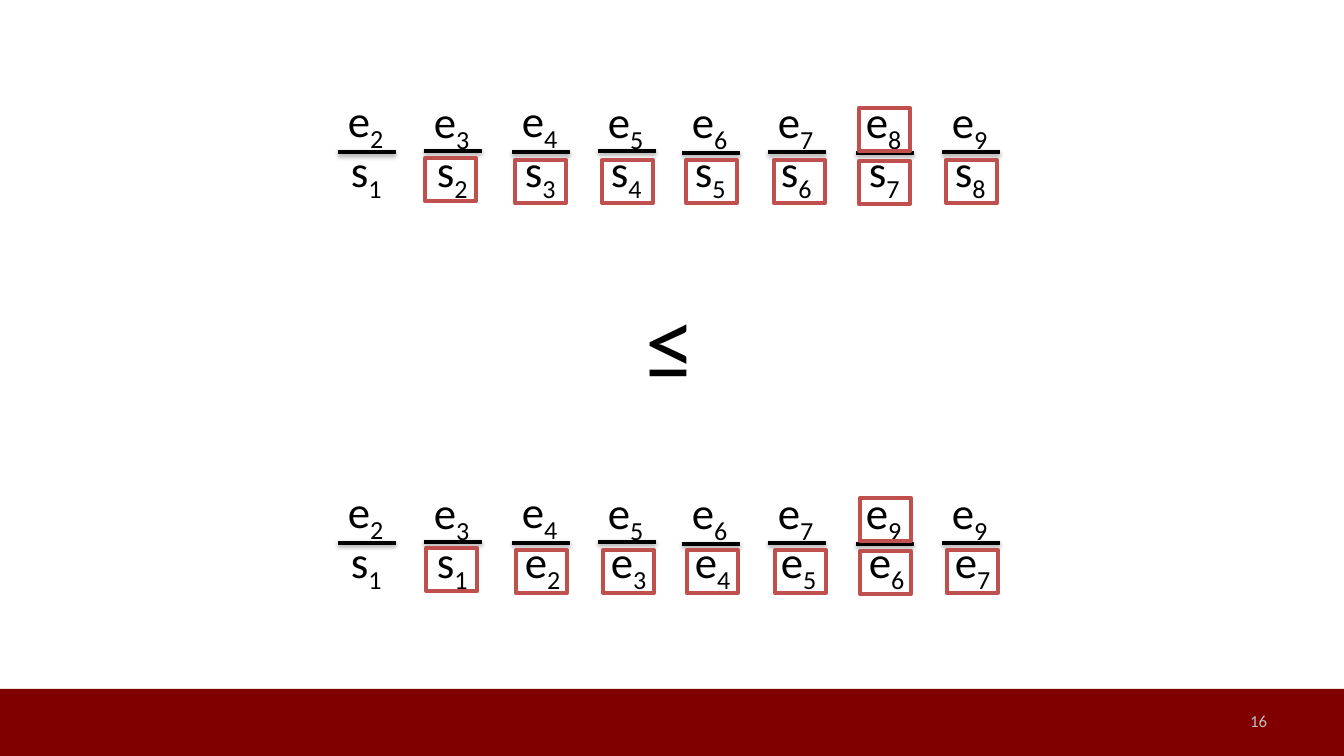
from lxml import etree
from pptx import Presentation
from pptx.dml.color import RGBColor
from pptx.enum import shapes, text
from pptx.oxml import ns
from pptx.util import Pt

PX = 914400 / 100.8
BLACK = RGBColor(0x00, 0x00, 0x00)
MAROON = RGBColor(0x80, 0x00, 0x00)
RED = RGBColor(0xC0, 0x50, 0x4D)
GREY = RGBColor(0xBF, 0xBF, 0xBF)
SHADOW = (
    f'<a:effectLst {ns.nsdecls("a")}>'
    '<a:outerShdw blurRad="40000" dist="23000" dir="5400000" rotWithShape="0">'
    '<a:srgbClr val="000000"><a:alpha val="35000"/></a:srgbClr>'
    '</a:outerShdw></a:effectLst>'
)


def px(*lengths):
    return [round(n * PX) for n in lengths]


def add_label(box, words, size, color=BLACK, subscript=""):
    """Add a text box holding words and an optional subscript run."""
    tf = s.shapes.add_textbox(*px(*box)).text_frame
    tf.word_wrap = False
    tf.auto_size = text.MSO_AUTO_SIZE.SHAPE_TO_FIT_TEXT
    p = tf.paragraphs[0]
    for part in filter(None, (words, subscript)):
        r = p.add_run()
        r.text = part
        r.font.name = "Calibri"
        r.font.size = Pt(size)
        r.font.color.rgb = color
    if subscript:
        r.font._element.set("baseline", "-25000")
    return tf


prs = Presentation()
prs.slide_width, prs.slide_height = px(1344, 756)
s = prs.slides.add_slide(prs.slide_layouts[6])

band = s.shapes.add_shape(shapes.MSO_SHAPE.RECTANGLE, *px(0, 689, 1344, 67))
band.shadow.inherit = False
band.fill.solid()
band.fill.fore_color.rgb = MAROON
band.line.fill.background()

tf = add_label((964, 701, 313, 40), "16", 12, GREY)
tf.auto_size = text.MSO_AUTO_SIZE.NONE
tf.word_wrap = True
tf.vertical_anchor = text.MSO_ANCHOR.MIDDLE
tf.paragraphs[0].alignment = text.PP_ALIGN.RIGHT

# Left edge, numerator top and bar height of each fraction
columns = [
    (338, 88, 152), (424, 89, 151), (512, 88, 152), (598, 89, 151),
    (682, 89, 153), (768, 89, 152), (856, 89, 153), (942, 89, 152),
]
# Vertical offset, numerators and denominators of each row of fractions
rows = [
    (0, "e2 e3 e4 e5 e6 e7 e8 e9", "s1 s2 s3 s4 s5 s6 s7 s8"),
    (391, "e2 e3 e4 e5 e6 e7 e9 e9", "s1 s1 e2 e3 e4 e5 e6 e7"),
]
for dy, numerators, denominators in rows:
    fractions = zip(columns, numerators.split(), denominators.split())
    for (x, top, bar_y), over, under in fractions:
        add_label((x, top + dy, 58, 64), over[0], 32, subscript=over[1])
        width = 58 if under[0] == "e" else 53
        add_label((x + 3, 138 + dy, width, 64), under[0], 32, subscript=under[1])
        bar = s.shapes.add_connector(
            shapes.MSO_CONNECTOR.STRAIGHT, *px(x, bar_y + dy, x + 58, bar_y + dy))
        bar.line.color.rgb = BLACK
        bar.line.width = Pt(3)
        bar._element.spPr.append(etree.fromstring(SHADOW))

add_label((636, 275, 72, 132), "≤", 72)

# Highlights in the upper row; the lower row repeats them, shifted
highlights = [(425, 158), (859, 108), (515, 160), (602, 160),
              (686, 160), (774, 160), (859, 161), (946, 160)]
for dx, dy in ((0, 0), (1, 390)):
    for x, y in highlights:
        frame = s.shapes.add_shape(
            shapes.MSO_SHAPE.RECTANGLE, *px(x + dx, y + dy, 51, 43))
        frame.shadow.inherit = False
        frame.fill.background()
        frame.line.color.rgb = RED
        frame.line.width = Pt(3)

prs.save("out.pptx")
